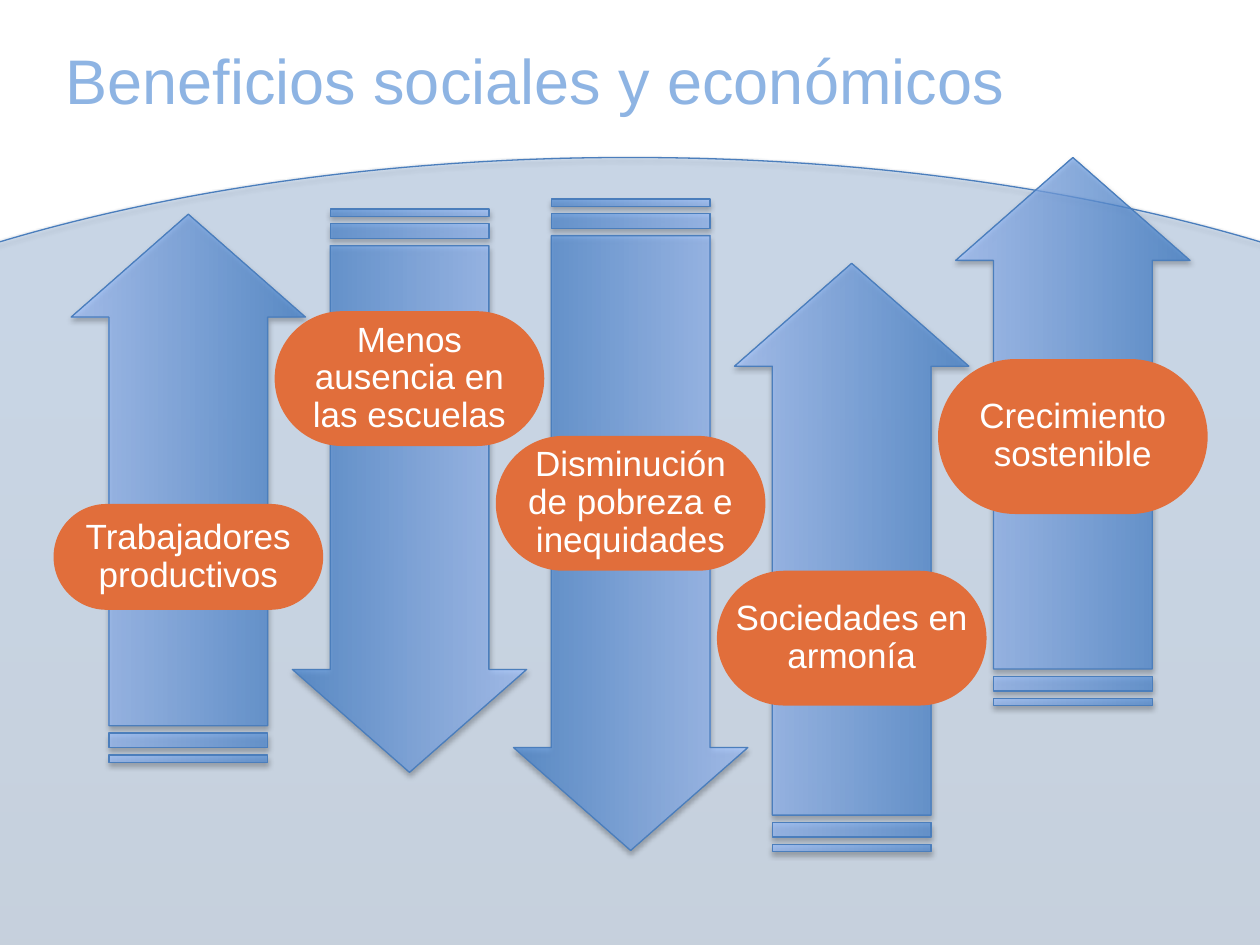
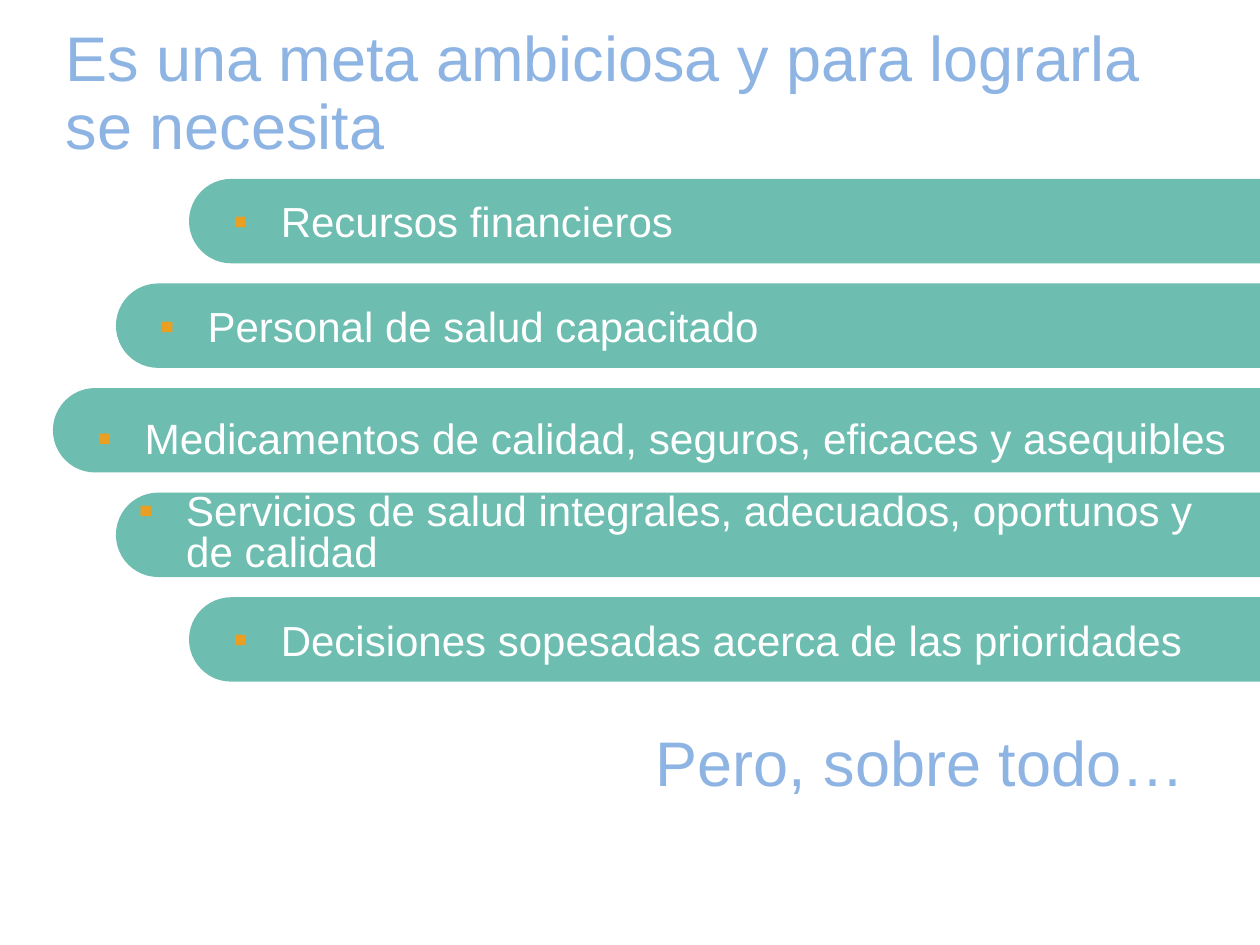
from lxml import etree
from pptx import Presentation
from pptx.dml.color import RGBColor
from pptx.enum.shapes import MSO_SHAPE
from pptx.enum.text import MSO_ANCHOR, MSO_AUTO_SIZE, PP_ALIGN
from pptx.oxml import parse_xml
from pptx.oxml.ns import qn
from pptx.util import Inches, Pt

LEFT, CENTER, RIGHT = PP_ALIGN.LEFT, PP_ALIGN.CENTER, PP_ALIGN.RIGHT
MIDDLE = MSO_ANCHOR.MIDDLE
NO_AUTOFIT = MSO_AUTO_SIZE.NONE
ELLIPSE = MSO_SHAPE.OVAL
PILL = MSO_SHAPE.ROUNDED_RECTANGLE
STRIPED_ARROW = MSO_SHAPE.STRIPED_RIGHT_ARROW

NS = 'xmlns:a="http://schemas.openxmlformats.org/drawingml/2006/main"'
FONT = "Arial"
WHITE, HEADING, OUTLINE = "FFFFFF", "8EB4E3", "4B7EBC"
ORANGE, TEAL, BULLET = "E16E3B", "6DBDB0", "EB9F22"

HILL_STOPS = [(0, "2F5F99", 20), (80, "3D7CC7", 20), (100, "3A7CCB", 20)]
ARROW_STOPS = [(0, "3F80CE", 69), (100, "A4C4FF", 69)]

FIRST_COLUMN, COLUMN_PITCH = 1.495, 1.755
ARROW_BREADTH, PILL_WIDTH = 1.86, 2.14
UP, DOWN = 270, 90
BENEFITS = [
    ("Trabajadores productivos", UP, 1.7, 4.35, 4, 0.84),
    ("Menos ausencia en las escuelas", DOWN, 1.66, 4.47, 2.47, 1.07),
    ("Disminución de pobreza e inequidades", DOWN, 1.58, 5.17, 3.46, 1.07),
    ("Sociedades en armonía", UP, 2.09, 4.67, 4.53, 1.07),
    ("Crecimiento sostenible", UP, 1.25, 4.35, 2.85, 1.23),
]

BAR_TOP, BAR_PITCH, BAR_WIDTH, BAR_HEIGHT = 1.42, 0.83, 10.08, 0.67
NEED_RIGHT = 9.9
NEEDS = [
    ("Recursos financieros", 1.5, 1.75, 0, 24, 1),
    ("Personal de salud capacitado", 0.92, 1.17, 0, 24, 1),
    ("Medicamentos de calidad, seguros, eficaces y asequibles", 0.42, 0.67, 0.06, 24.2, 1),
    ("Servicios de salud integrales, adecuados, oportunos y de calidad", 0.92, 1, 0, 24, 0.8),
    ("Decisiones sopesadas acerca de las prioridades", 1.5, 1.75, 0, 24, 1),
]


def rgb(color):
    return RGBColor.from_string(color)


def shadow_xml(blur, distance, angle, alpha):
    return parse_xml(
        f'<a:outerShdw {NS} blurRad="{Pt(blur)}" dist="{Pt(distance)}" '
        f'dir="{angle * 60000}" algn="tl" rotWithShape="0">'
        f'<a:srgbClr val="000000"><a:alpha val="{alpha * 1000}"/></a:srgbClr>'
        '</a:outerShdw>')


def add_flat(shapes, kind, box, color):
    shape = shapes.add_shape(kind, *map(Inches, box))
    shape.shadow.inherit = False
    shape.fill.solid()
    shape.fill.fore_color.rgb = rgb(color)
    shape.line.fill.background()
    return shape


def add_pill(shapes, box, color):
    pill = add_flat(shapes, PILL, box, color)
    pill.adjustments[0] = 0.5


def add_glossy(shapes, kind, box, stops):
    shape = add_flat(shapes, kind, box, stops[0][1])
    stop_list = "".join(
        f'<a:gs pos="{position * 1000}"><a:srgbClr val="{color}">'
        f'<a:alpha val="{alpha * 1000}"/></a:srgbClr></a:gs>'
        for position, color, alpha in stops)
    properties = shape.element.spPr
    properties.replace(properties.find(qn("a:solidFill")), parse_xml(
        f'<a:gradFill {NS} rotWithShape="1"><a:gsLst>{stop_list}</a:gsLst>'
        '<a:lin ang="16200000" scaled="0"/></a:gradFill>'))
    shape.line.color.rgb = rgb(OUTLINE)
    shape.line.width = Pt(0.75)
    properties.find(qn("a:effectLst")).append(shadow_xml(3.1, 1.8, 90, 35))
    return shape


def write(frame, text, size, color, align=LEFT, spacing=1, shadow=True, bullet=False):
    frame.word_wrap = True
    frame.auto_size = NO_AUTOFIT
    frame.vertical_anchor = MIDDLE
    paragraph = frame.paragraphs[0]
    paragraph.alignment = align
    paragraph.line_spacing = spacing
    if bullet:
        add_bullet(paragraph)
    for number, line in enumerate(text.split("\n")):
        if number:
            paragraph.add_line_break()
        run = paragraph.add_run()
        run.text = line
        run.font.size = Pt(size)
        run.font.color.rgb = rgb(color)
        if shadow:
            effects = etree.Element(qn("a:effectLst"))
            effects.append(shadow_xml(4, 4, 45, 45))
            run.font._element.find(qn("a:solidFill")).addnext(effects)
        run.font.name = FONT


def add_bullet(paragraph):
    properties = paragraph._p.get_or_add_pPr()
    properties.set("marL", str(Inches(0.38)))
    properties.set("indent", str(-Inches(0.38)))
    properties.append(parse_xml(
        f'<a:buClr {NS}><a:srgbClr val="{BULLET}"/></a:buClr>'))
    properties.append(parse_xml(f'<a:buFont {NS} typeface="{FONT}"/>'))
    properties.append(parse_xml(f'<a:buChar {NS} char="▪"/>'))


def add_label(shapes, box, text, size, color, **style):
    label = shapes.add_textbox(*map(Inches, box))
    write(label.text_frame, text, size, color, **style)


def set_title(slide, text, height, spacing=1):
    title = slide.shapes.title
    title.left, title.top = Inches(0.42), Inches(0.17)
    title.width, title.height = Inches(9.5), Inches(height)
    write(title.text_frame, text, 36, HEADING, spacing=spacing)


def add_arrow(slide, center, top, length, rotation):
    middle = top + length / 2
    box = (center - length / 2, middle - ARROW_BREADTH / 2, length, ARROW_BREADTH)
    arrow = add_glossy(slide.shapes, STRIPED_ARROW, box, ARROW_STOPS)
    arrow.rotation = rotation
    arrow.adjustments[0] = 0.677
    arrow.adjustments[1] = 0.439


def add_benefit(slide, center, text, top, height):
    group = slide.shapes.add_group_shape()
    left = center - PILL_WIDTH / 2
    add_pill(group.shapes, (left, top, PILL_WIDTH, height), ORANGE)
    add_label(group.shapes, (left + 0.04, top, PILL_WIDTH - 0.08, height),
              text, 20, WHITE, align=CENTER, spacing=0.9)


def add_need(slide, top, text, bar_left, text_left, drop, size, spacing):
    group = slide.shapes.add_group_shape()
    add_pill(group.shapes, (bar_left, top, BAR_WIDTH, BAR_HEIGHT), TEAL)
    add_label(group.shapes, (text_left, top + drop, NEED_RIGHT - text_left, BAR_HEIGHT),
              text, size, WHITE, spacing=spacing, shadow=False, bullet=True)


def build_benefits(slide):
    add_glossy(slide.shapes, ELLIPSE, (-3.5, 1.25, 17, 7), HILL_STOPS)
    set_title(slide, "Beneficios sociales y económicos", 0.92)
    for column, benefit in enumerate(BENEFITS):
        text, rotation, arrow_top, length, pill_top, pill_height = benefit
        center = FIRST_COLUMN + column * COLUMN_PITCH
        add_arrow(slide, center, arrow_top, length, rotation)
        add_benefit(slide, center, text, pill_top, pill_height)


def build_needs(slide):
    set_title(slide, "Es una meta ambiciosa y para lograrla \nse necesita", 1.17, 0.9)
    add_label(slide.shapes, (4.33, 5.58, 5.17, 0.92), "Pero, sobre todo…",
              36, HEADING, align=RIGHT)
    for row, need in enumerate(NEEDS):
        add_need(slide, BAR_TOP + row * BAR_PITCH, *need)


def main():
    deck = Presentation()
    deck.slide_width, deck.slide_height = Inches(10), Inches(7.5)
    title_only = deck.slide_layouts[5]
    for build in (build_benefits, build_needs):
        build(deck.slides.add_slide(title_only))
    deck.save("out.pptx")


if __name__ == "__main__":
    main()
